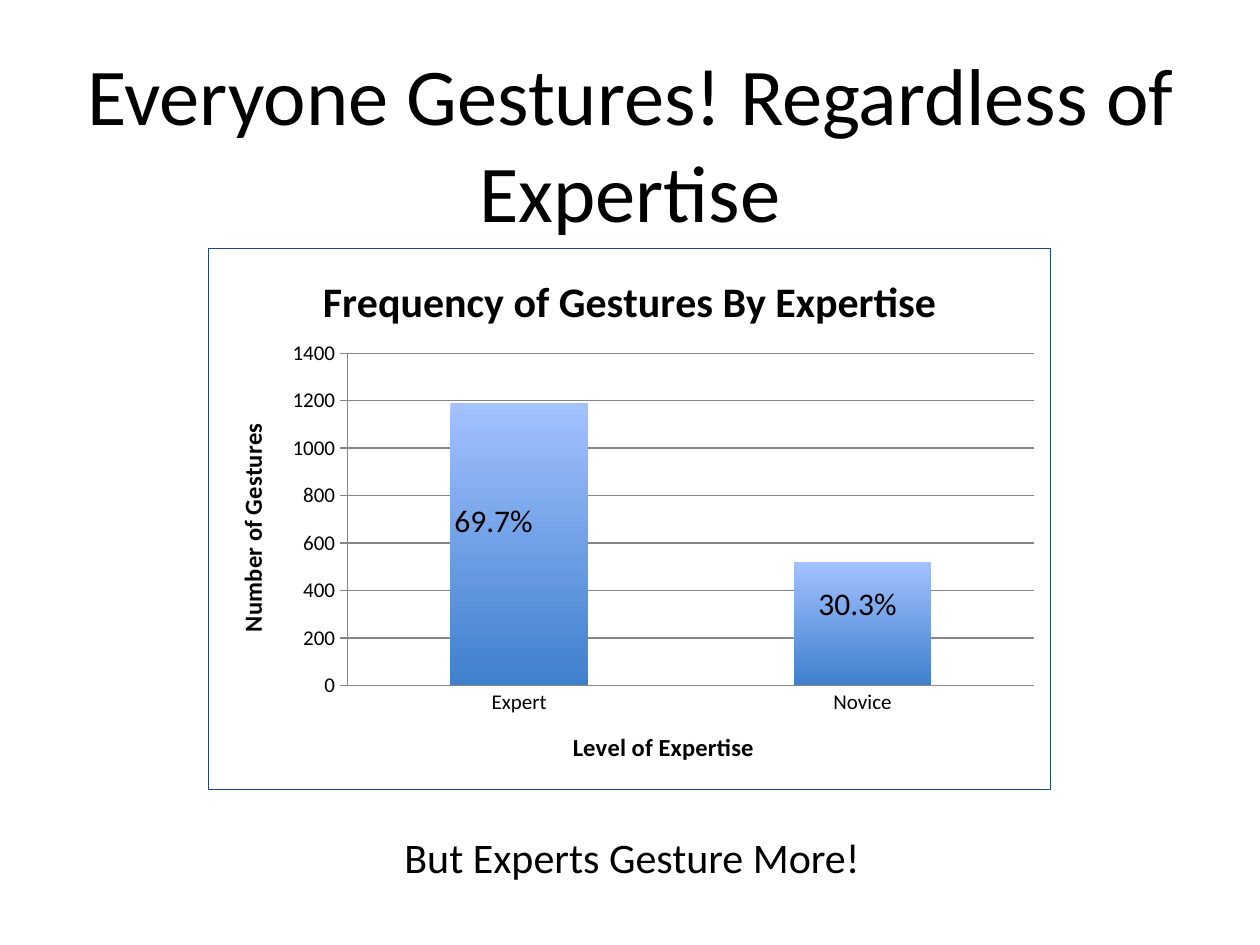
from lxml import etree
from pptx import Presentation
from pptx.chart.data import CategoryChartData
from pptx.dml.color import RGBColor
from pptx.enum.chart import XL_CHART_TYPE, XL_TICK_MARK
from pptx.enum.text import MSO_ANCHOR, PP_ALIGN
from pptx.oxml import parse_xml
from pptx.oxml.ns import nsdecls, qn
from pptx.util import Emu, Pt

COLUMNS = XL_CHART_TYPE.COLUMN_CLUSTERED
TICK_NONE, TICK_CROSS = XL_TICK_MARK.NONE, XL_TICK_MARK.CROSS
LEFT, CENTER = PP_ALIGN.LEFT, PP_ALIGN.CENTER
MIDDLE, TOP = MSO_ANCHOR.MIDDLE, MSO_ANCHOR.TOP

PX_PER_INCH = 126
FONT = "Calibri"
COLORS = {
    "text": "000000",
    "grid": "878787",
    "border": "1F497D",
    "bar_top": "A3C1FF",
    "bar_bottom": "3F80CD",
}


def px(n):
    return Emu(round(n * 914400 / PX_PER_INCH))


def rgb(name):
    return RGBColor.from_string(COLORS[name])


class Deck:
    """Holds the text style and the current slide."""

    def __init__(self, width, height):
        self.prs = Presentation()
        self.prs.slide_width, self.prs.slide_height = px(width), px(height)
        self.slide = self.prs.slides.add_slide(self.prs.slide_layouts[6])

    def style(self, font, size, bold=False):
        for key, value in {"name": FONT, "size": Pt(size), "bold": bold}.items():
            setattr(font, key, value)
        font.color.rgb = rgb("text")

    def text(self, box, text, size, align=LEFT, anchor=TOP, wrap=False):
        sp = self.slide.shapes.add_textbox(*map(px, box))
        tf = sp.text_frame
        for key, value in {"word_wrap": wrap, "vertical_anchor": anchor}.items():
            setattr(tf, key, value)
        p = tf.paragraphs[0]
        p.alignment = align
        r = p.add_run()
        r.text = text
        self.style(r.font, size)

    def heading(self, owner, text, size):
        """Title a chart or one of its axes."""
        title = owner.chart_title if hasattr(owner, "chart_title") else owner.axis_title
        r = title.text_frame.paragraphs[0].add_run()
        r.text = text
        self.style(r.font, size, bold=True)

    def axis(self, axis, title, tick, grid):
        formats = {
            "major_tick_mark": tick,
            "minor_tick_mark": TICK_NONE,
            "has_major_gridlines": grid,
        }
        for key, value in formats.items():
            setattr(axis, key, value)
        lines = [axis.format.line] + ([axis.major_gridlines.format.line] if grid else [])
        for line in lines:
            line.color.rgb = rgb("grid")
            line.width = Pt(0.75)
        self.style(axis.tick_labels.font, 12)
        self.heading(axis, title, 14)

    def column_chart(self, box, title, categories, values, axis_titles, plot_box):
        data = CategoryChartData()
        data.categories = categories
        data.add_series("Series 1", values)
        chart = self.slide.shapes.add_chart(COLUMNS, *map(px, box), data).chart
        chart.has_legend = False
        self.style(chart.font, 10)
        self.heading(chart, title, 24)
        self.axis(chart.category_axis, axis_titles[0], TICK_NONE, False)
        self.axis(chart.value_axis, axis_titles[1], TICK_CROSS, True)
        scale = {"minimum_scale": 0, "maximum_scale": 1400, "major_unit": 200}
        for key, value in scale.items():
            setattr(chart.value_axis, key, value)

        plot = chart.plots[0]
        plot.gap_width, plot.vary_by_categories = 150, False
        fill = plot.series[0].format.fill
        fill.gradient()
        fill.gradient_angle = 270
        for stop, name in zip(fill.gradient_stops, ("bar_top", "bar_bottom")):
            stop.color.rgb = rgb(name)

        self.place_plot(chart, box, plot_box)
        self.border(chart)

    def place_plot(self, chart, box, plot_box):
        """Fix the inner plot area, given in slide px."""
        area = chart.element.find(".//" + qn("c:plotArea"))
        for old in area.findall(qn("c:layout")):
            area.remove(old)
        layout = parse_xml(f"<c:layout {nsdecls('c')}><c:manualLayout/></c:layout>")
        x, y, w, h = plot_box
        left, top, width, height = box
        settings = {
            "layoutTarget": "inner", "xMode": "edge", "yMode": "edge",
            "x": (x - left) / width, "y": (y - top) / height,
            "w": w / width, "h": h / height,
        }
        for tag, value in settings.items():
            etree.SubElement(layout[0], qn("c:" + tag)).set("val", str(value))
        area.insert(0, layout)

    def border(self, chart):
        frame = parse_xml(
            f"<c:spPr {nsdecls('c', 'a')}><a:noFill/><a:ln w='{Pt(0.75)}'><a:solidFill>"
            f"<a:srgbClr val='{COLORS['border']}'/></a:solidFill></a:ln></c:spPr>"
        )
        chart.element.find(qn("c:txPr")).addprevious(frame)


def main():
    deck = Deck(1260, 945)
    deck.column_chart(
        (208, 248, 843, 542), "Frequency of Gestures By Expertise",
        ("Expert", "Novice"), (1190, 520),
        ("Level of Expertise", "Number of Gestures"), (347, 353, 688, 333),
    )
    deck.text((63, 38, 1134, 208), "Everyone Gestures! Regardless of Expertise",
              46, CENTER, MIDDLE, wrap=True)
    deck.text((442, 495, 105, 50), "69.7%", 18)
    deck.text((806, 578, 105, 50), "30.3%", 18)
    deck.text((392, 825, 486, 63), "But Experts Gesture More!", 24)
    deck.prs.save("out.pptx")


if __name__ == "__main__":
    main()
